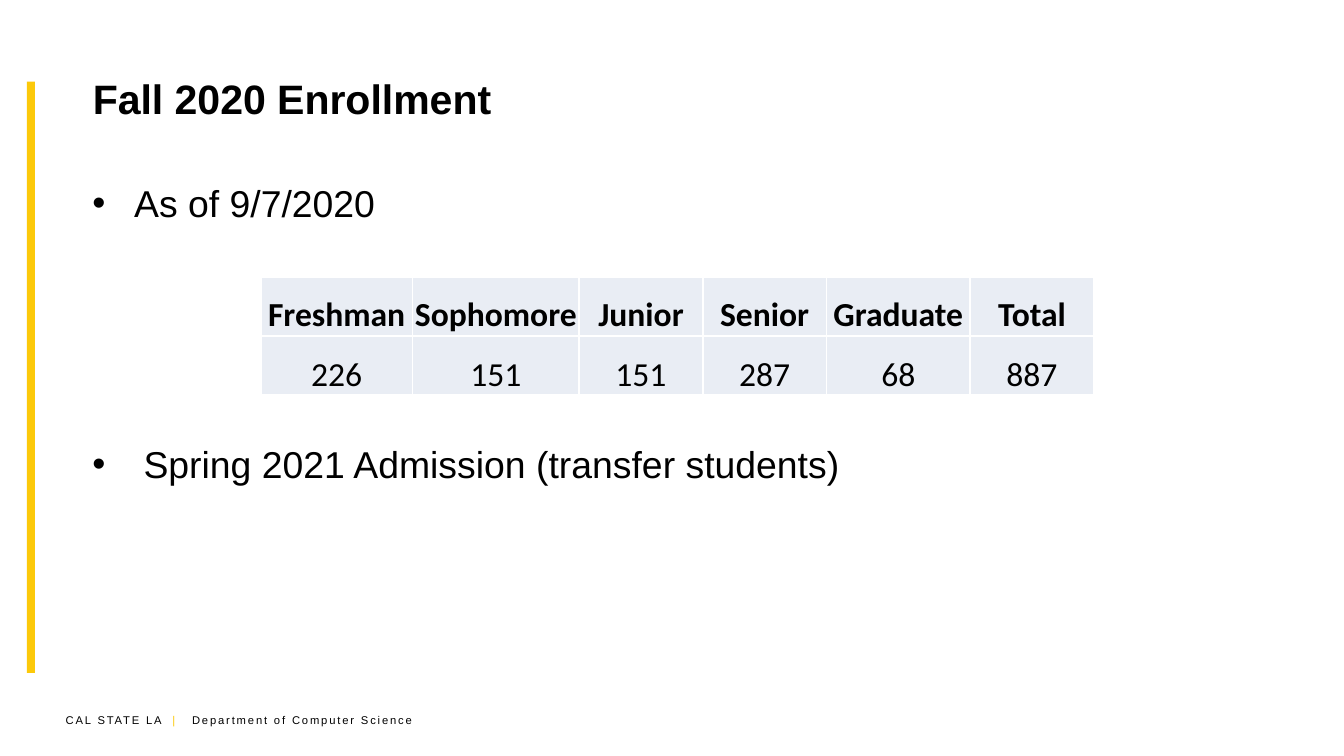
from typing import NamedTuple

from lxml import etree
from pptx import Presentation
from pptx.dml.color import RGBColor
from pptx.enum import shapes, text
from pptx.oxml import ns
from pptx import util as u

BLACK = RGBColor(0x00, 0x00, 0x00)
GOLD = RGBColor(0xFC, 0xC9, 0x0A)
PALE = RGBColor(0xE9, 0xED, 0xF4)
WHITE = RGBColor(0xFF, 0xFF, 0xFF)

# 16:9 slide on a grid of 100 columns by 100 rows
WIDTH = u.Inches(10)
HEIGHT = WIDTH * 9 // 16
COL, ROW = WIDTH / 100, HEIGHT / 100


class Box(NamedTuple):
    """A place on the slide grid."""
    col: float
    row: float
    cols: float
    rows: float

    def emu(self) -> tuple:
        return (round(self.col * COL), round(self.row * ROW),
                round(self.cols * COL), round(self.rows * ROW))


class Bullet(NamedTuple):
    words: str
    indent: float  # columns
    before: float  # points


class Level(NamedTuple):
    name: str
    count: int
    cols: float


TITLE = Box(5.9, 4.62, 89, 16.71)
BODY = Box(5.9, 22.93, 89, 65.96)
BAR = Box(2, 10.8, 0.6, 78.22)
FOOTER = Box(3.9, 93.51, 29.2, 3.56)
TABLE = Box(19.4, 36.62, 62, 15.64)
FOOTER_TABS = (7.95, 9.4)

BULLETS = [Bullet("As of 9/7/2020", 3.1, 0),
           Bullet("Spring 2021 Admission (transfer students)", 3.8, 116)]
LEVELS = [Level("Freshman", 226, 11.3), Level("Sophomore", 151, 12.4),
          Level("Junior", 151, 9.2), Level("Senior", 287, 9.2),
          Level("Graduate", 68, 10.7), Level("Total", 887, 9.2)]


def add_run(p, words: str, size: float, font: str = "Arial",
            color: RGBColor = BLACK, bold: bool = False, spacing: float = 0):
    r = p.add_run()
    r.text = words
    r.font.size, r.font.name, r.font.bold = u.Pt(size), font, bold
    r.font.color.rgb = color
    if spacing:
        r.font._element.set("spc", str(round(spacing * 100)))


def add_text_box(s, box: Box):
    tf = s.shapes.add_textbox(*box.emu()).text_frame
    tf.word_wrap = True
    return tf


def add_bullet(p, bullet: Bullet):
    pPr = p._p.get_or_add_pPr()
    indent = round(bullet.indent * COL)
    pPr.set("marL", str(indent))
    pPr.set("indent", str(-indent))
    etree.SubElement(pPr, ns.qn("a:buFont")).set("typeface", "Arial")
    etree.SubElement(pPr, ns.qn("a:buChar")).set("char", "•")
    if bullet.before:
        p.space_before = u.Pt(bullet.before)
    add_run(p, bullet.words, 20)


def set_borders(cell, color: RGBColor, points: float):
    tcPr = cell._tc.get_or_add_tcPr()
    for i, side in enumerate(("lnL", "lnR", "lnT", "lnB")):
        ln = etree.Element(ns.qn(f"a:{side}"), w=str(u.Pt(points)))
        fill = etree.SubElement(ln, ns.qn("a:solidFill"))
        etree.SubElement(fill, ns.qn("a:srgbClr")).set("val", str(color))
        tcPr.insert(i, ln)


def fill_cell(cell, words: str, bold: bool):
    cell.fill.solid()
    cell.fill.fore_color.rgb = PALE
    set_borders(cell, WHITE, 1)
    cell.margin_left = cell.margin_right = 0
    cell.margin_top = cell.margin_bottom = 0
    cell.vertical_anchor = text.MSO_ANCHOR.BOTTOM
    p = cell.text_frame.paragraphs[0]
    p.alignment = text.PP_ALIGN.CENTER
    add_run(p, words, 18, font="Calibri", bold=bold)


def add_enrollment(s, box: Box, levels: list):
    table = s.shapes.add_table(2, len(levels), *box.emu()).table
    for i, level in enumerate(levels):
        table.columns[i].width = round(level.cols * COL)
        fill_cell(table.cell(0, i), level.name, bold=True)
        fill_cell(table.cell(1, i), str(level.count), bold=False)


def main():
    prs = Presentation()
    prs.slide_width, prs.slide_height = WIDTH, HEIGHT
    s = prs.slides.add_slide(prs.slide_layouts[5])

    # Side bar
    sp = s.shapes.add_shape(shapes.MSO_SHAPE.RECTANGLE, *BAR.emu())
    sp.shadow.inherit = False
    sp.fill.solid()
    sp.fill.fore_color.rgb = GOLD
    sp.line.fill.background()

    # Footer
    p = add_text_box(s, FOOTER).paragraphs[0]
    tabs = etree.SubElement(p._p.get_or_add_pPr(), ns.qn("a:tabLst"))
    for col in FOOTER_TABS:
        etree.SubElement(tabs, ns.qn("a:tab"), pos=str(round(col * COL)), algn="l")
    add_run(p, "CAL STATE LA", 6, spacing=1)
    add_run(p, "\t|\t", 6, color=GOLD, spacing=1)
    add_run(p, "Department of Computer Science", 6, spacing=1)

    # Title
    title = s.shapes.title
    title.left, title.top, title.width, title.height = TITLE.emu()
    tf = title.text_frame
    tf.auto_size = text.MSO_AUTO_SIZE.NONE
    tf.vertical_anchor = text.MSO_ANCHOR.MIDDLE
    p = tf.paragraphs[0]
    p.alignment = text.PP_ALIGN.LEFT
    add_run(p, "Fall 2020 Enrollment", 22, bold=True)

    # Bullets, leaving room for the table between them
    tf = add_text_box(s, BODY)
    for i, bullet in enumerate(BULLETS):
        add_bullet(tf.add_paragraph() if i else tf.paragraphs[0], bullet)

    # Enrollment table
    add_enrollment(s, TABLE, LEVELS)

    prs.save("out.pptx")


if __name__ == "__main__":
    main()
